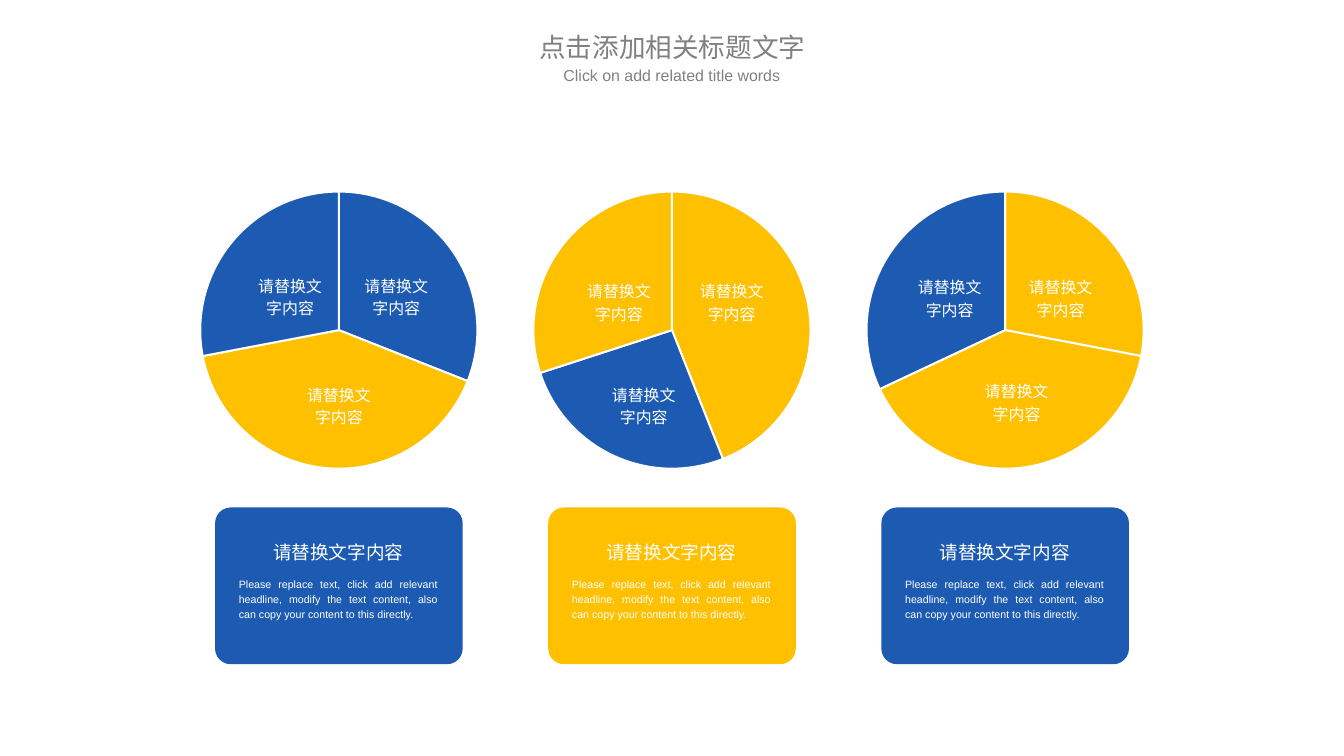
"""Build a slide with three pie charts, each above a rounded caption card."""
from lxml import etree
from pptx import Presentation
from pptx import util as u
from pptx.chart import data as cd
from pptx.dml import color
from pptx.enum import chart, shapes, text
from pptx.oxml import ns

COLORS = {"blue": "1D5BB3", "gold": "FFC000", "white": "FFFFFF", "gray": "808080", "black": "000000"}
LABEL = "请替换文字内容"
BODY = ("Please replace text, click add relevant headline, modify the text content, "
        "also can copy your content to this directly.")
CENTER, JUSTIFY = text.PP_ALIGN.CENTER, text.PP_ALIGN.JUSTIFY
PIE_W, PIE_H, PIE_D = 3.69, 3.19, 2.9
LEFT, PITCH = 1.7, 3.485
COLUMNS = [
    {"values": (31, 41, 28, None), "points": ("blue", "gold", "blue", "gold"), "card": "blue",
     "width": 0.95, "labels": [(2.56, 2.8), (3.67, 2.8), (3.07, 3.94)]},
    {"values": (44, 26, 30, None), "points": ("gold", "blue", "gold", "gold"), "card": "gold",
     "width": 0.97, "labels": [(7.17, 2.86), (5.99, 2.86), (6.25, 3.94)]},
    {"values": (28, 40, 32, None), "points": ("gold", "gold", "blue", "gold"), "card": "blue",
     "width": 0.95, "labels": [(9.46, 2.82), (10.62, 2.82), (10.16, 3.9)]},
]


def rgb(name):
    """Return the named palette colour."""
    return color.RGBColor.from_string(COLORS[name])


def apply(obj, values):
    """Set each attribute of obj from a dict."""
    for key, value in values.items():
        setattr(obj, key, value)


def box(*lengths):
    """Convert left, top, width and height to inches."""
    return [u.Inches(n) for n in lengths]


def write(sp, words, size, fill="white", align=CENTER, spacing=1.2, font="Arial",
          wrap=True, anchor=text.MSO_ANCHOR.TOP):
    """Write one formatted paragraph into a shape."""
    tf = sp.text_frame
    apply(tf, {"word_wrap": wrap, "auto_size": text.MSO_AUTO_SIZE.NONE, "vertical_anchor": anchor})
    p = tf.paragraphs[0]
    apply(p, {"alignment": align, "line_spacing": spacing})
    r = p.add_run()
    r.text = words
    apply(r.font, {"size": u.Pt(size), "name": font})
    r.font.color.rgb = rgb(fill)
    etree.SubElement(r.font._element, ns.qn("a:ea"), typeface=font)


def add_text(s, place, words, size, **fmt):
    """Add a text box."""
    write(s.shapes.add_textbox(*box(*place)), words, size, **fmt)


def add_title(s):
    """Place the slide title and the subtitle."""
    sp = s.shapes.title
    apply(sp, dict(zip(("left", "top", "width", "height"), box(5.36, 0.29, 3.35, 0.41))))
    write(sp, "点击添加相关标题文字", 20, fill="gray", spacing=1.0,
          font="Noto Sans CJK SC", anchor=text.MSO_ANCHOR.MIDDLE)
    add_text(s, (5.76, 0.64, 2.54, 0.41), "Click on add related title words", 12,
             fill="gray", spacing=1.0)


def set_plot_size(ch):
    """Centre the pie in its frame at a fixed diameter."""
    area = ch._chartSpace.chart.plotArea
    for old in area.findall(ns.qn("c:layout")):
        area.remove(old)
    layout = etree.Element(ns.qn("c:layout"))
    manual = etree.SubElement(layout, ns.qn("c:manualLayout"))
    w, h = PIE_D / PIE_W, PIE_D / PIE_H
    for tag, val in (("layoutTarget", "inner"), ("xMode", "edge"), ("yMode", "edge"),
                     ("x", (1 - w) / 2), ("y", (1 - h) / 2), ("w", w), ("h", h)):
        etree.SubElement(manual, ns.qn("c:" + tag), val=str(val))
    area.insert(0, layout)


def add_pie(s, left, column):
    """Add a pie chart and its slice labels."""
    data = cd.CategoryChartData()
    data.categories = ["1", "2", "3", "4"]
    data.add_series("Series 1", column["values"])
    ch = s.shapes.add_chart(chart.XL_CHART_TYPE.PIE, *box(left, 1.86, PIE_W, PIE_H), data).chart
    apply(ch, {"has_legend": False, "has_title": False})
    apply(ch.font, {"size": u.Pt(10), "name": "Arial"})
    ch.font.color.rgb = rgb("black")
    plot = ch.plots[0]
    plot.vary_by_categories = True
    for i, name in enumerate(column["points"]):
        fmt = plot.series[0].points[i].format
        fmt.fill.solid()
        fmt.fill.fore_color.rgb = rgb(name)
        fmt.line.color.rgb = rgb("white")
        fmt.line.width = u.Pt(1.5)
    set_plot_size(ch)
    for x, y in column["labels"]:
        add_text(s, (x, y, column["width"], 0.59), LABEL, 12)


def add_card(s, left, fill):
    """Add a rounded card with a heading and a body text."""
    sp = s.shapes.add_shape(shapes.MSO_SHAPE.ROUNDED_RECTANGLE, *box(left, 5.31, 2.59, 1.64))
    sp.adjustments[0] = 0.1
    sp.shadow.inherit = False
    sp.fill.solid()
    sp.fill.fore_color.rgb = rgb(fill)
    sp.line.fill.background()
    add_text(s, (left + 0.15, 5.97, 2.28, 0.57), BODY, 8, align=JUSTIFY)
    add_text(s, (left + 0.5, 5.56, 1.58, 0.36), LABEL, 14, wrap=False)


def main():
    """Build and save the slide."""
    prs = Presentation()
    apply(prs, {"slide_width": u.Inches(14.06), "slide_height": u.Inches(7.91)})
    s = prs.slides.add_slide(prs.slide_layouts[5])
    add_title(s)
    for i, column in enumerate(COLUMNS):
        left = LEFT + i * PITCH
        add_pie(s, left, column)
        add_card(s, left + 0.55, column["card"])
    prs.save("out.pptx")


if __name__ == "__main__":
    main()
